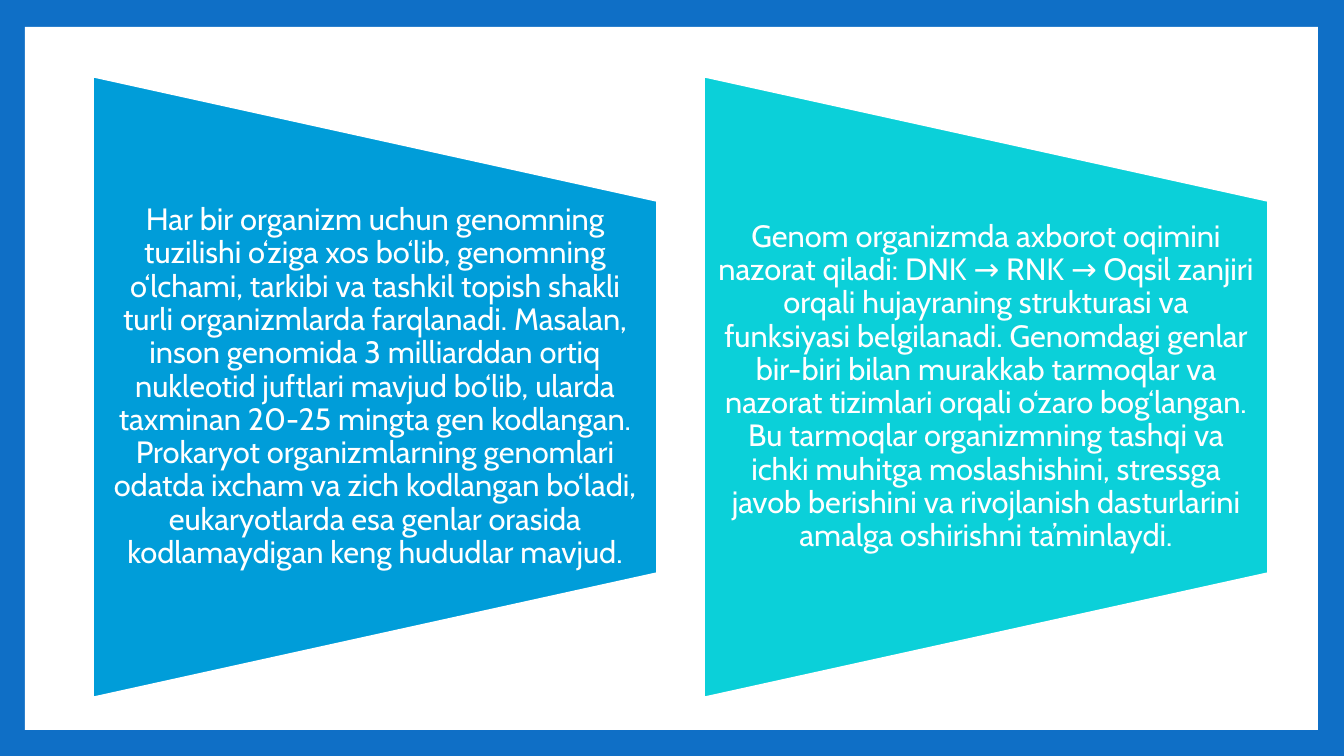
import pptx
import pptx.dml.color
import pptx.enum.shapes
import pptx.enum.text
import pptx.util

SLIDE_W, SLIDE_H = 1344, 756
SCALE = 12192000 / SLIDE_W
SHAPE = pptx.enum.shapes.MSO_SHAPE

PANELS = [
    ("009DD9",
     "Har bir organizm uchun genomning tuzilishi o‘ziga xos bo‘lib, genomning "
     "o‘lchami, tarkibi va tashkil topish shakli turli organizmlarda farqlanadi. "
     "Masalan, inson genomida 3 milliarddan ortiq nukleotid juftlari mavjud bo‘lib, "
     "ularda taxminan 20-25 mingta gen kodlangan. Prokaryot organizmlarning "
     "genomlari odatda ixcham va zich kodlangan bo‘ladi, eukaryotlarda esa genlar "
     "orasida kodlamaydigan keng hududlar mavjud."),
    ("0BD0D9",
     "Genom organizmda axborot oqimini nazorat qiladi: DNK → RNK → Oqsil zanjiri "
     "orqali hujayraning strukturasi va funksiyasi belgilanadi. Genomdagi genlar "
     "bir-biri bilan murakkab tarmoqlar va nazorat tizimlari orqali o‘zaro "
     "bog‘langan. Bu tarmoqlar organizmning tashqi va ichki muhitga moslashishini, "
     "stressga javob berishini va rivojlanish dasturlarini amalga oshirishni "
     "ta’minlaydi."),
]


def px(n):
    return pptx.util.Emu(round(n * SCALE))


def rgb(color):
    return pptx.dml.color.RGBColor.from_string(color)


def add_filled(s, kind, x, y, w, h, color):
    sp = s.shapes.add_shape(kind, px(x), px(y), px(w), px(h))
    sp.shadow.inherit = False
    sp.fill.solid()
    sp.fill.fore_color.rgb = rgb(color)
    sp.line.fill.background()
    return sp


def add_frame(s, x, y, w, h):
    """Blue slide background with a white page inside it."""
    s.background.fill.solid()
    s.background.fill.fore_color.rgb = rgb("0F6FC6")
    add_filled(s, SHAPE.RECTANGLE, x, y, w, h, "FFFFFF")


def add_panel(s, x, y, w, h, color, text):
    """Trapezoid narrowing to the right, with text in its middle three fifths."""
    # The shape is turned a quarter, so its own width and height are swapped.
    sp = add_filled(s, SHAPE.FLOWCHART_MANUAL_OPERATION,
                    x + (w - h) / 2, y + (h - w) / 2, h, w, color)
    sp.rotation = 270
    sp.line.color.rgb = rgb("FFFFFF")
    sp.line.width = pptx.util.Pt(4.25)

    box = s.shapes.add_textbox(px(x), px(y + h / 5), px(w), px(h * 3 / 5))
    tf = box.text_frame
    tf.word_wrap = True
    tf.vertical_anchor = pptx.enum.text.MSO_ANCHOR.MIDDLE
    tf.margin_left = tf.margin_right = px(16)
    tf.margin_top = tf.margin_bottom = 0
    p = tf.paragraphs[0]
    p.alignment = pptx.enum.text.PP_ALIGN.CENTER
    p.line_spacing = 0.9
    r = p.add_run()
    r.text = text
    r.font.name = "Cabin"
    r.font.size = pptx.util.Pt(22)
    r.font.color.rgb = rgb("FFFFFF")


def main():
    prs = pptx.Presentation()
    prs.slide_width, prs.slide_height = px(SLIDE_W), px(SLIDE_H)
    s = prs.slides.add_slide(prs.slide_layouts[6])
    add_frame(s, 25, 27, 1293, 703)
    for i, (color, text) in enumerate(PANELS):
        add_panel(s, 91 + i * 611, 74, 568, 626, color, text)
    prs.save("out.pptx")


if __name__ == "__main__":
    main()
